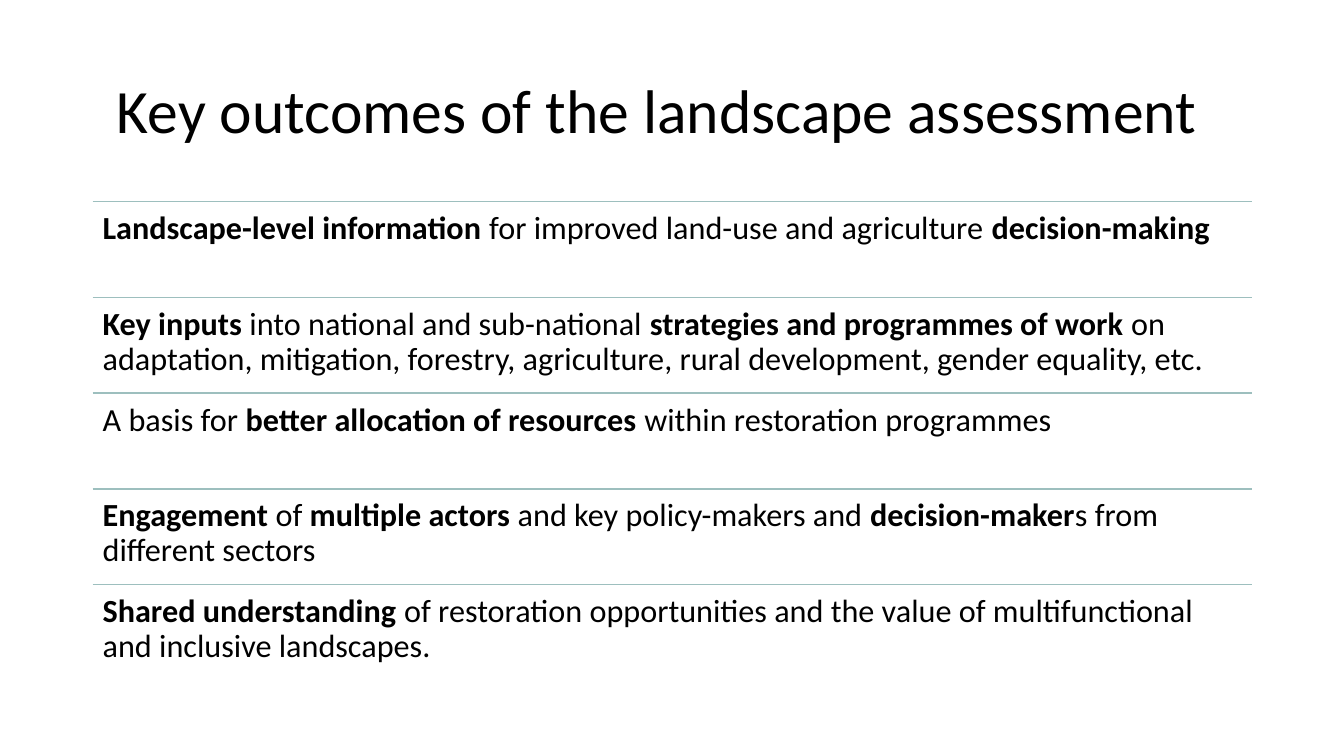
from dataclasses import dataclass
from lxml.etree import SubElement as Sub
from pptx import Presentation
from pptx.dml.color import RGBColor as Rgb
from pptx.enum.shapes import MSO_CONNECTOR as Conn
from pptx.enum.text import MSO_ANCHOR as Anchor, MSO_AUTO_SIZE as Fit, PP_ALIGN as Align
from pptx.oxml.ns import qn
from pptx.util import Inches, Pt


@dataclass(frozen=True)
class Theme:
    font: str = "Calibri"
    ink: Rgb = Rgb(0, 0, 0)
    rule: Rgb = Rgb(0x9D, 0xBF, 0xBE)
    head: float = 44
    body: float = 23
    line: float = 1


class Deck:
    def __init__(self, theme):
        self.theme = theme
        self.file = Presentation()
        self.file.slide_width = Inches(13.33)
        self.file.slide_height = Inches(7.5)
        self.slide = self.file.slides.add_slide(self.file.slide_layouts[5])

    def fill_text(self, frame, runs, size, anchor, pad):
        frame.word_wrap = True
        frame.auto_size = Fit.NONE
        frame.vertical_anchor = anchor
        frame.margin_left = frame.margin_right = Inches(0.1)
        frame.margin_top = frame.margin_bottom = Inches(pad)
        para = frame.paragraphs[0]
        para.alignment = Align.LEFT
        para.line_spacing = 0.9
        for text, bold in runs:
            run = para.add_run()
            run.text = text
            font = run.font
            font.name, font.size, font.bold = self.theme.font, Pt(size), bold
            font.color.rgb = self.theme.ink

    def title(self, text, left, top, width, height):
        shape = self.slide.shapes.title
        shape.left, shape.top = Inches(left), Inches(top)
        shape.width, shape.height = Inches(width), Inches(height)
        self.fill_text(shape.text_frame, [(text, False)], self.theme.head, Anchor.MIDDLE, 0.05)

    def rule(self, left, top, width):
        line = self.slide.shapes.add_connector(
            Conn.STRAIGHT, Inches(left), Inches(top), Inches(left + width), Inches(top))
        line.line.color.rgb = self.theme.rule
        line.line.width = Pt(self.theme.line)
        Sub(line._element.spPr, qn("a:effectLst"))

    def text(self, runs, left, top, width, height):
        box = self.slide.shapes.add_textbox(
            Inches(left), Inches(top), Inches(width), Inches(height))
        self.fill_text(box.text_frame, runs, self.theme.body, Anchor.TOP, 0.1)


LEFT, WIDTH = 0.92, 11.5
TOP, STEP = 2, 0.95
ITEMS = [
    [("Landscape-level information ", True),
     ("for improved land-use and agriculture ", False),
     ("decision-making", True)],
    [("Key inputs ", True),
     ("into national and sub-national ", False),
     ("strategies and programmes of work ", True),
     ("on adaptation, mitigation, forestry, agriculture, rural development, "
      "gender equality, etc.", False)],
    [("A basis for ", False),
     ("better allocation of resources", True),
     (" within restoration programmes", False)],
    [("Engagement", True),
     (" of ", False),
     ("multiple actors ", True),
     ("and key policy-makers and ", False),
     ("decision-maker", True),
     ("s from different sectors", False)],
    [("Shared understanding ", True),
     ("of restoration opportunities and the value of multifunctional "
      "and inclusive landscapes.", False)],
]


def main():
    deck = Deck(Theme())
    deck.title(" Key outcomes of the landscape assessment", LEFT, 0.4, WIDTH, 1.45)
    for row, runs in enumerate(ITEMS):
        top = TOP + row * STEP
        deck.rule(LEFT, top, WIDTH)
        deck.text(runs, LEFT, top, WIDTH, STEP)
    deck.file.save("out.pptx")


if __name__ == "__main__":
    main()
